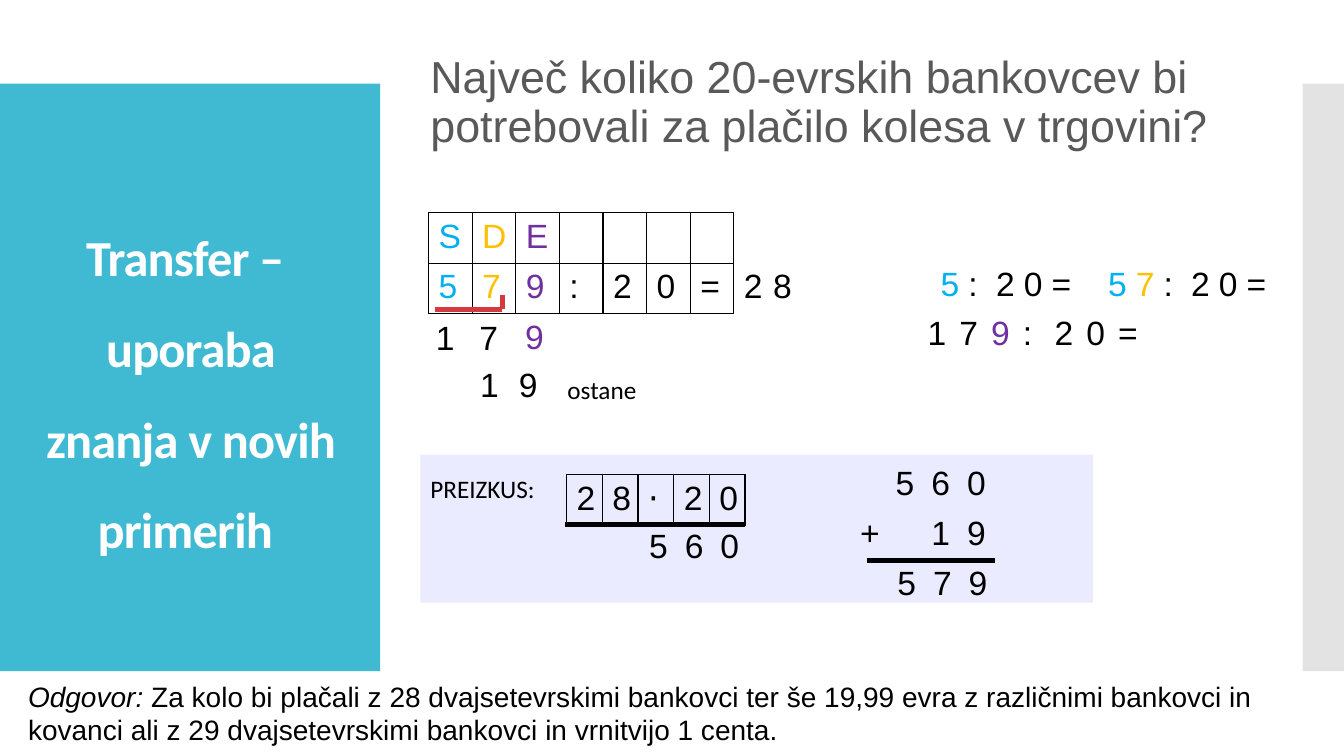
"""Build a slide that solves and checks a written division."""
from lxml.etree import SubElement
from pptx import Presentation
from pptx.dml.color import RGBColor
from pptx.enum.shapes import MSO_CONNECTOR, MSO_SHAPE
from pptx.enum.text import MSO_ANCHOR as Anchor, PP_ALIGN as Align
from pptx.oxml import parse_xml
from pptx.oxml.ns import nsdecls, qn
from pptx.util import Inches, Pt

BLACK, WHITE, RED = "000000", "FFFFFF", "D5393D"
HUNDREDS, TENS, ONES = "00B0F0", "FFC000", "7030A0"
DIGIT = {"name": "Arial", "size": Pt(24)}
LABEL = {"name": "Calibri", "size": Pt(18)}
ANSWER = {"name": "Arial", "size": Pt(20)}
NO_GRID_STYLE = "{2D5ABB26-0587-4C30-8999-92F81FD0307C}"


def set_color(color_format, value):
    """Give a colour format a hex colour."""
    color_format.rgb = RGBColor.from_string(value)


def apply(target, values):
    """Set every attribute named in a dict of format values."""
    for name, value in values.items():
        setattr(target, name, value)


def add_run(paragraph, text, font, color=BLACK):
    """Append a formatted run to a paragraph."""
    run = paragraph.add_run()
    run.text = text
    apply(run.font, font)
    set_color(run.font.color, color)
    return run


def add_panel(slide, box, color, alpha=None):
    """Add a plain rectangle, optionally see-through."""
    shape = slide.shapes.add_shape(MSO_SHAPE.RECTANGLE, *map(Inches, box))
    shape.shadow.inherit = False
    shape.fill.solid()
    set_color(shape.fill.fore_color, color)
    shape.line.fill.background()
    if alpha:
        fill_color = shape.fill._xPr.find(qn("a:solidFill"))[0]
        SubElement(fill_color, qn("a:alpha"), val=str(alpha * 1000))


def add_text(slide, box, text, font, color=BLACK, layout=None, anchor=Anchor.TOP):
    """Add a wrapped text box and return its paragraph."""
    frame = slide.shapes.add_textbox(*map(Inches, box)).text_frame
    apply(frame, {"word_wrap": True, "vertical_anchor": anchor})
    paragraph = frame.paragraphs[0]
    apply(paragraph, layout or {})
    add_run(paragraph, text, font, color)
    return paragraph


def add_rule(slide, start, end, color=BLACK):
    """Add a thick straight line between two points."""
    line = slide.shapes.add_connector(
        MSO_CONNECTOR.STRAIGHT, *map(Inches, start + end))
    line.line.width = Pt(3.5)
    set_color(line.line.color, color)
    SubElement(line._element.spPr, qn("a:effectLst"))


def add_borders(cell):
    """Draw a thin black line on each side of a cell."""
    properties = cell._tc.get_or_add_tcPr()
    for position, side in enumerate("LRTB"):
        properties.insert(position, parse_xml(
            f'<a:ln{side} {nsdecls("a")} w="12700"><a:solidFill>'
            f'<a:srgbClr val="{BLACK}"/></a:solidFill></a:ln{side}>'))


def add_digits(slide, left, top, column, rows, colors=None, align=Align.LEFT,
               height=0.48, bordered=False):
    """Add a table with one character of each row string per cell."""
    count = len(rows[0])
    table = slide.shapes.add_table(
        len(rows), count, Inches(left), Inches(top),
        Inches(column * count), Inches(height * len(rows))).table
    apply(table, {"first_row": False, "horz_banding": False})
    table._tbl.tblPr.find(qn("a:tableStyleId")).text = NO_GRID_STYLE
    for table_column in table.columns:
        table_column.width = Inches(column)
    for cell, character in zip(table.iter_cells(), "".join(rows)):
        cell.fill.background()
        paragraph = cell.text_frame.paragraphs[0]
        paragraph.alignment = align
        apply(paragraph.font, DIGIT)
        if character != " ":
            add_run(paragraph, character, DIGIT, (colors or {}).get(character, BLACK))
        if bordered:
            add_borders(cell)


def add_headings(slide):
    """Add the side panels, the title and the question."""
    add_panel(slide, (0, 0.83, 3.77, 5.83), "40BAD2")
    add_panel(slide, (12.92, 0.83, 0.42, 5.83), "C8C8C8", alpha=50)
    title_font = {"name": "Calibri", "size": Pt(36), "bold": True}
    title = add_text(slide, (0.28, 1.23, 3.22, 5.03), "Transfer – ", title_font, WHITE,
                     {"alignment": Align.CENTER, "line_spacing": 1.5}, Anchor.MIDDLE)
    title.add_line_break()
    add_run(title, "uporaba znanja v novih primerih ", title_font, WHITE)
    for run in title.runs:
        run.font._element.set("spc", "-60")
    add_text(slide, (4.17, 0.38, 8.38, 1.29),
             "Največ koliko 20-evrskih bankovcev bi potrebovali za plačilo kolesa v trgovini?",
             {"name": "Arial", "size": Pt(32)}, "595959",
             {"line_spacing": 0.9, "space_before": Pt(12)}, Anchor.MIDDLE)


def add_division(slide):
    """Add the written division and its partial steps."""
    places = {"S": HUNDREDS, "D": TENS, "E": ONES, "5": HUNDREDS, "7": TENS, "9": ONES}
    add_digits(slide, 4.25, 2.11, 0.433, ["SDE    ", "579:20="], places, bordered=True)
    add_digits(slide, 9.23, 2.59, 0.275, ["5:20= "], places, Align.CENTER)
    add_digits(slide, 10.89, 2.59, 0.275, ["57:20= "], places, Align.CENTER)
    for position, digit in enumerate("28"):
        add_text(slide, (7.28 + 0.29 * position, 2.58, 0.29, 0.5), digit, DIGIT,
                 layout={"alignment": Align.CENTER})
    corner = (4.98, 3.07)
    add_rule(slide, (4.31, 3.07), corner, RED)
    add_rule(slide, corner, (4.98, 2.93), RED)
    add_digits(slide, 3.79, 3.13, 0.433, [" 17 "])
    add_digits(slide, 5.02, 3.12, 0.56, ["9"], places, Align.CENTER, height=0.68)
    add_digits(slide, 9.1, 3.08, 0.315, ["179:20= "], {"9": ONES})
    add_digits(slide, 4.28, 3.59, 0.383, [" 19 "])
    add_text(slide, (5.53, 3.66, 1.21, 0.4), "ostane", LABEL)


def add_check(slide):
    """Add the multiplication and addition that check the result."""
    column = 0.354
    add_text(slide, (4.17, 4.65, 1.44, 0.4), "PREIZKUS:", LABEL)
    add_digits(slide, 5.62, 4.71, column, ["28⋅20"], bordered=True)
    add_rule(slide, (5.6, 5.2), (7.39, 5.2))
    add_digits(slide, 5.63, 5.19, column, ["  560"], height=0.57)
    add_digits(slide, 8.43, 4.56, column, [" 560", "+ 19"], height=0.5)
    add_rule(slide, (8.6, 5.56), (9.87, 5.56))
    add_digits(slide, 8.8, 5.56, column, ["579"])


def main():
    """Build and save the slide."""
    presentation = Presentation()
    apply(presentation, {"slide_width": Inches(13.33), "slide_height": Inches(7.5)})
    slide = presentation.slides.add_slide(presentation.slide_layouts[6])
    add_panel(slide, (4.17, 4.51, 6.67, 1.47), "EBEBFF")
    add_headings(slide)
    add_division(slide)
    add_check(slide)
    answer = add_text(slide, (0.18, 6.69, 12.9, 0.77), "Odgovor: ", {**ANSWER, "italic": True})
    add_run(answer, "Za kolo bi plačali z 28 dvajsetevrskimi bankovci ter še 19,99 evra "
            "z različnimi bankovci in kovanci ali z 29 dvajsetevrskimi bankovci "
            "in vrnitvijo 1 centa.", ANSWER)
    presentation.save("out.pptx")


if __name__ == "__main__":
    main()
